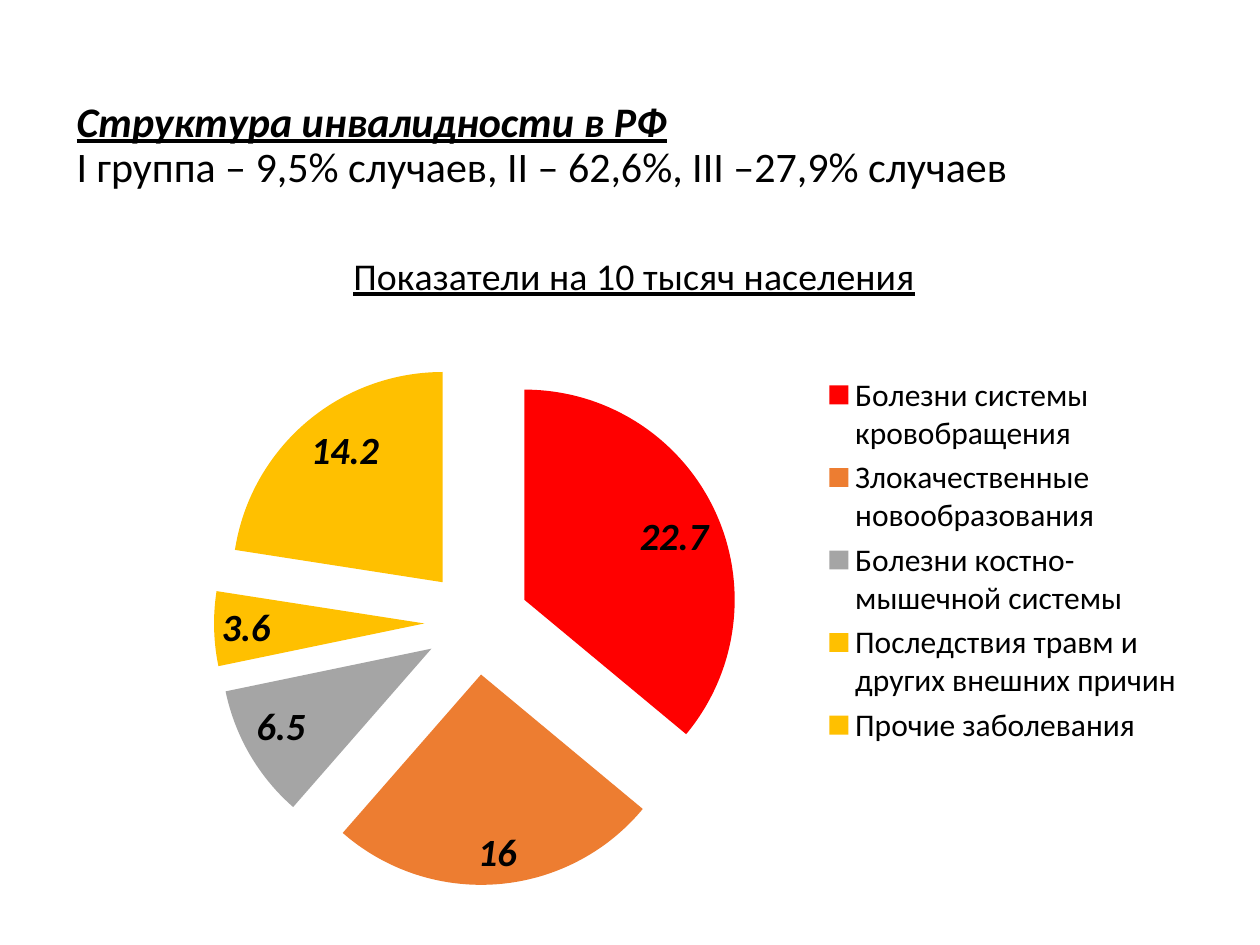
import pptx
import pptx.chart.data
import pptx.dml.color
import pptx.enum.chart
import pptx.enum.text
import pptx.oxml
import pptx.oxml.ns
import pptx.util

Pt = pptx.util.Pt
RGBColor = pptx.dml.color.RGBColor

BLACK = RGBColor(0x00, 0x00, 0x00)
RED = RGBColor(0xFF, 0x00, 0x00)
ORANGE = RGBColor(0xED, 0x7D, 0x31)
GRAY = RGBColor(0xA5, 0xA5, 0xA5)
AMBER = RGBColor(0xFF, 0xC0, 0x00)

DISEASES = [
    ("Болезни системы кровобращения", 22.7, RED),
    ("Злокачественные новообразования", 16, ORANGE),
    ("Болезни костно-мышечной системы", 6.5, GRAY),
    ("Последствия травм и других внешних причин", 3.6, AMBER),
    ("Прочие заболевания", 14.2, AMBER),
]


class SlideBuilder:
    font_name = "Calibri"

    def __init__(self, presentation):
        self.slide = presentation.slides.add_slide(presentation.slide_layouts[6])

    def format_font(self, font, **values):
        for name, value in {"name": self.font_name, **values}.items():
            setattr(font, name, value)
        font.color.rgb = BLACK

    def add_heading(self, bounds, lines):
        shape = self.slide.shapes.add_textbox(*map(Pt, bounds))
        frame = shape.text_frame
        frame.word_wrap = True
        frame.vertical_anchor = pptx.enum.text.MSO_ANCHOR.MIDDLE
        frame.margin_bottom = Pt(30)
        paragraph = frame.paragraphs[0]
        paragraph.line_spacing = 0.9
        for index, (text, values) in enumerate(lines):
            if index:
                paragraph.add_line_break()
            run = paragraph.add_run()
            run.text = text
            self.format_font(run.font, size=Pt(24), **values)

    def set_layout(self, parent, position, **fractions):
        """Place a chart part by fractions of the chart size."""
        for old in parent.findall(pptx.oxml.ns.qn("c:layout")):
            parent.remove(old)
        modes = '<c:xMode val="edge"/><c:yMode val="edge"/>'
        values = "".join(f'<c:{key} val="{value}"/>' for key, value in fractions.items())
        parent.insert(position, pptx.oxml.parse_xml(
            f'<c:layout {pptx.oxml.ns.nsdecls("c")}><c:manualLayout>'
            f"{modes}{values}</c:manualLayout></c:layout>"))

    def add_exploded_pie(self, bounds, title, items, explosion):
        data = pptx.chart.data.CategoryChartData()
        data.categories = [name for name, _, _ in items]
        data.add_series("Series 1", [value for _, value, _ in items])
        chart = self.slide.shapes.add_chart(
            pptx.enum.chart.XL_CHART_TYPE.PIE, *map(Pt, bounds), data).chart
        self.format_font(chart.font, size=Pt(18))

        # Chart title
        chart.has_title = True
        paragraph = chart.chart_title.text_frame.paragraphs[0]
        run = paragraph.add_run()
        run.text = title
        self.format_font(run.font, size=Pt(21.6), bold=False, underline=True)
        self.set_layout(chart.chart_title._element, 1, x=0.25, y=0.04)

        # Legend
        chart.has_legend = True
        chart.legend.position = pptx.enum.chart.XL_LEGEND_POSITION.RIGHT
        chart.legend.include_in_layout = False
        self.format_font(chart.legend.font, size=Pt(18))

        # Slices, pulled apart
        plot = chart.plots[0]
        plot.vary_by_categories = True
        series = plot.series[0]
        for index, (_, _, color) in enumerate(items):
            fill = series.points[index].format.fill
            fill.solid()
            fill.fore_color.rgb = color
        series._element.find(pptx.oxml.ns.qn("c:dPt")).addprevious(
            pptx.oxml.parse_xml(
                f'<c:explosion {pptx.oxml.ns.nsdecls("c")} val="{explosion}"/>'))
        self.set_layout(chart._chartSpace.chart.plotArea, 0,
                        x=0.13, y=0.21, w=0.47, h=0.76)

        # Value labels
        plot.has_data_labels = True
        labels = plot.data_labels
        label_format = {
            "show_value": True,
            "show_percentage": False,
            "number_format": "General",
            "number_format_is_linked": False,
            "position": pptx.enum.chart.XL_LABEL_POSITION.INSIDE_END,
        }
        for name, value in label_format.items():
            setattr(labels, name, value)
        self.format_font(labels.font, size=Pt(22), bold=True, italic=True)


def main():
    presentation = pptx.Presentation()
    presentation.slide_width = Pt(720)
    presentation.slide_height = Pt(540)
    builder = SlideBuilder(presentation)

    # Heading
    builder.add_heading((36.7, 54.7, 648, 84.2), [
        ("Структура инвалидности в РФ",
         {"bold": True, "italic": True, "underline": True}),
        ("I группа – 9,5% случаев, II – 62,6%, III –27,9% случаев", {}),
    ])

    # Disability rates by disease
    builder.add_exploded_pie((36, 122.4, 648, 395.3),
                             "Показатели на 10 тысяч населения", DISEASES, 25)
    presentation.save("out.pptx")


if __name__ == "__main__":
    main()
